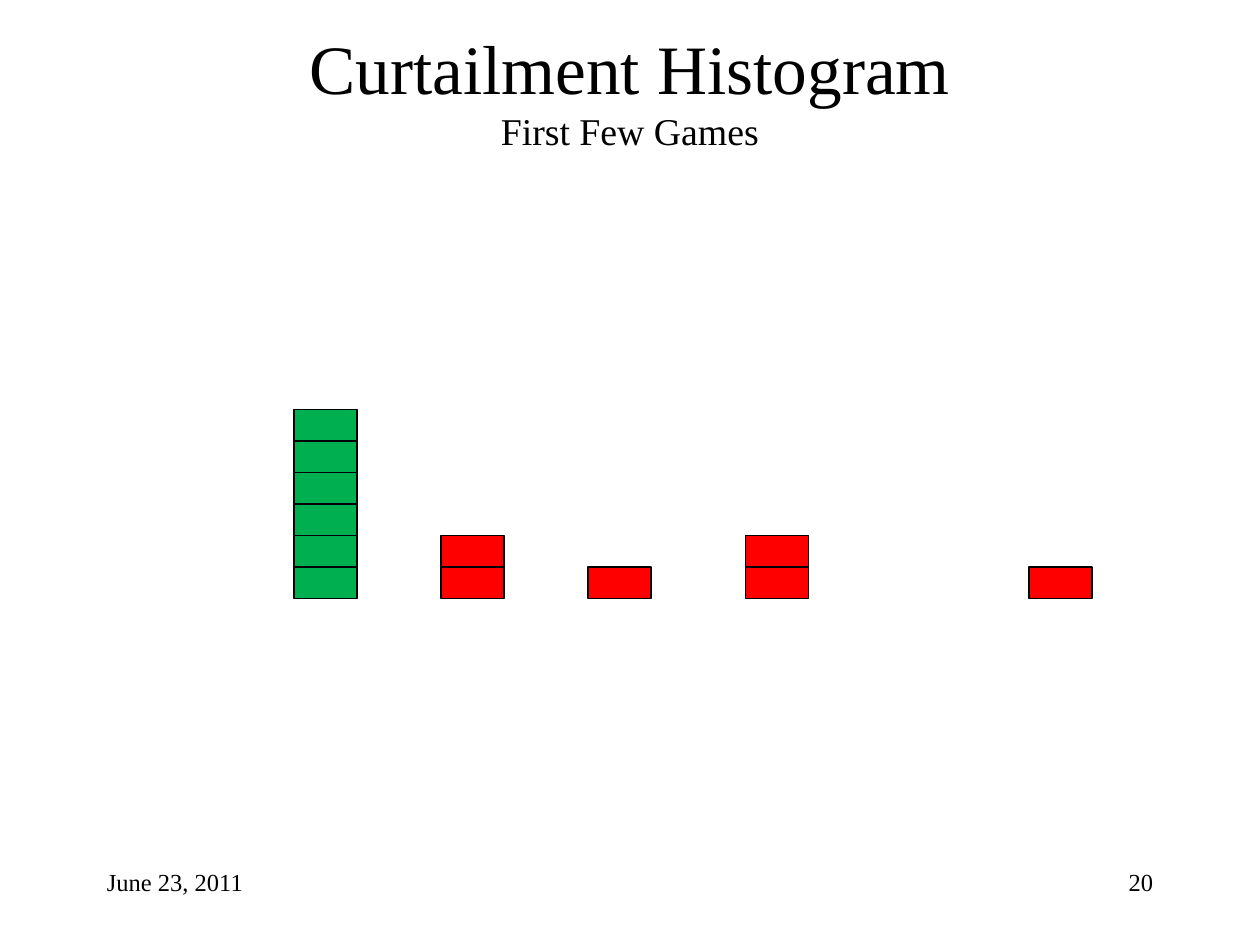
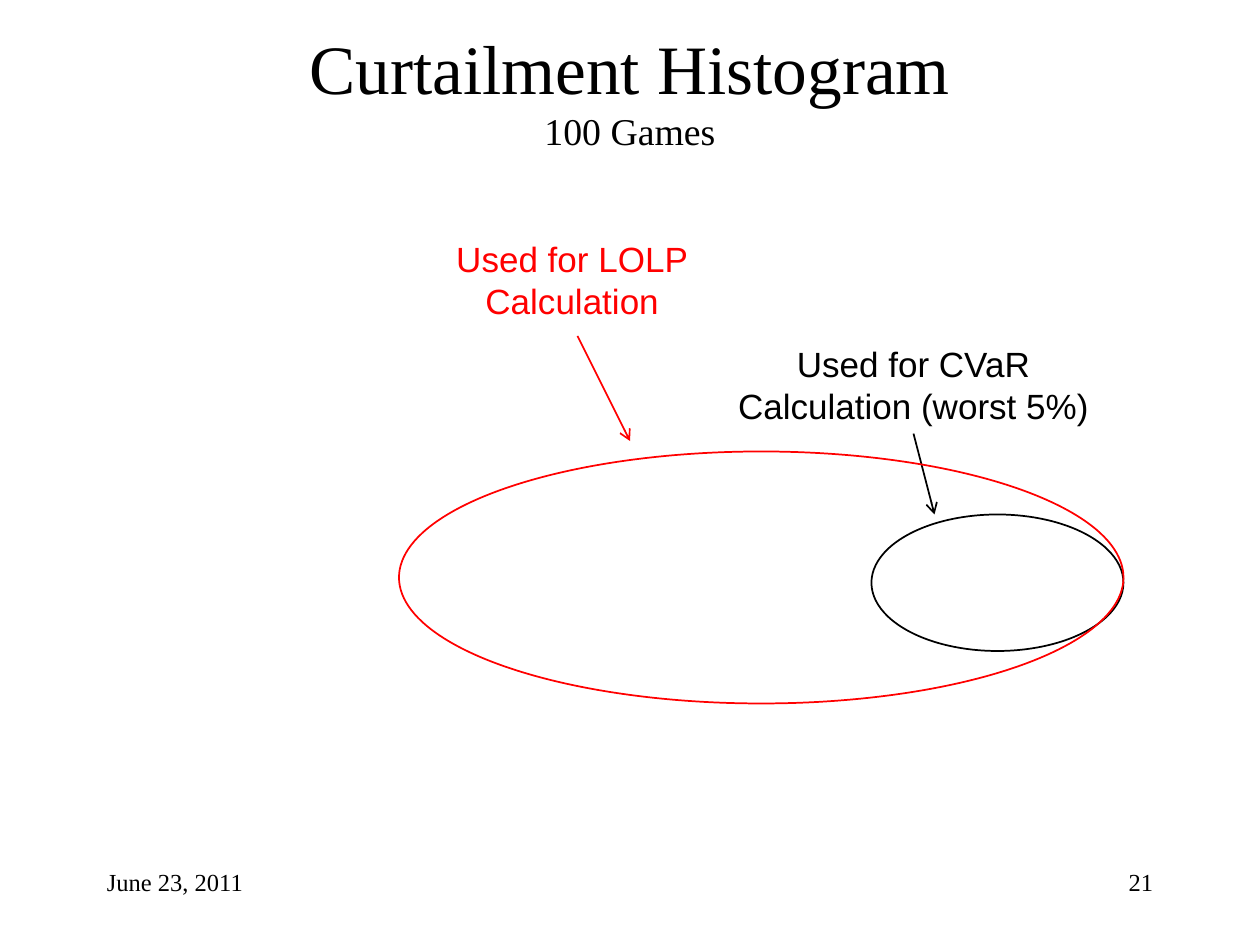
"""Build two curtailment histogram slides."""
from lxml.etree import SubElement
from pptx import Presentation
from pptx.dml.color import RGBColor
from pptx.enum.shapes import MSO_CONNECTOR, MSO_SHAPE
from pptx.enum.text import MSO_ANCHOR, PP_ALIGN
from pptx.oxml.ns import qn
from pptx.util import Emu, Pt

PX = 7620
BLACK, RED, GREEN = "000000", "FF0000", "00B050"

TITLE = "Curtailment Histogram"
DATE = "June 23, 2011"
FIRST_PAGE = 20
SUBTITLES = ["First Few Games", "100 Games"]

BLOCK_WIDTH, BLOCK_HEIGHT, BASELINE = 60, 30, 570
COLUMNS = [
    (280, 6, GREEN),
    (420, 2, RED),
    (560, 1, RED),
    (710, 2, RED),
    (980, 1, RED),
]

REGIONS = [
    {
        "color": BLACK,
        "lines": ["Used for CVaR Calculation (worst 5%)"],
        "label": (680, 320, 380, 92),
        "arrow": (870, 413, 890, 490),
        "oval": (830, 490, 240, 130),
    },
    {
        "color": RED,
        "lines": ["Used for LOLP", "Calculation"],
        "label": (370, 220, 350, 92),
        "arrow": (550, 320, 600, 420),
        "oval": (380, 430, 690, 240),
    },
]

TITLE_BOX = (90, 20, 1020, 130)
DATE_BOX = (90, 820, 250, 60)
NUMBER_BOX = (860, 820, 250, 60)

HEADING = {"name": "Times New Roman", "size": Pt(39.6)}
SUBHEADING = {"name": "Times New Roman", "size": Pt(21.6)}
FOOTER = {"name": "Times New Roman", "size": Pt(14)}
LABEL = {"name": "Arial", "size": Pt(20)}


def emu(lengths):
    return [Emu(length * PX) for length in lengths]


def rgb(color):
    return RGBColor.from_string(color)


def add_span(para, text, style, color=BLACK):
    span = para.add_run()
    span.text = text
    for name, value in style.items():
        setattr(span.font, name, value)
    span.font.color.rgb = rgb(color)


def add_box(page, place, lines, style, align, color=BLACK):
    frame = page.shapes.add_textbox(*emu(place)).text_frame
    frame.word_wrap = True
    for index, line in enumerate(lines):
        para = frame.add_paragraph() if index else frame.paragraphs[0]
        para.alignment = align
        add_span(para, line, style, color)
    return frame


def set_line(shape, color):
    shape.line.color.rgb = rgb(color)
    shape.line.width = Pt(1)


def add_outline(page, kind, place, line, fill=None):
    shape = page.shapes.add_shape(kind, *emu(place))
    shape.shadow.inherit = False
    if fill:
        shape.fill.solid()
        shape.fill.fore_color.rgb = rgb(fill)
    else:
        shape.fill.background()
    set_line(shape, line)


def add_arrow(page, ends, color):
    arrow = page.shapes.add_connector(MSO_CONNECTOR.STRAIGHT, *emu(ends))
    set_line(arrow, color)
    SubElement(arrow.line._get_or_add_ln(), qn("a:tailEnd"), type="arrow")
    SubElement(arrow._element.spPr, qn("a:effectLst"))


def add_page(deck, subtitle, number):
    page = deck.slides.add_slide(deck.slide_layouts[6])
    frame = add_box(page, TITLE_BOX, [TITLE], HEADING, PP_ALIGN.CENTER)
    frame.vertical_anchor = MSO_ANCHOR.MIDDLE
    para = frame.paragraphs[0]
    para.add_line_break()
    add_span(para, subtitle, SUBHEADING)
    add_box(page, DATE_BOX, [DATE], FOOTER, PP_ALIGN.LEFT)
    add_box(page, NUMBER_BOX, [str(number)], FOOTER, PP_ALIGN.RIGHT)
    return page


def add_histogram(page):
    for left, count, color in COLUMNS:
        for level in range(1, count + 1):
            place = (left, BASELINE - level * BLOCK_HEIGHT, BLOCK_WIDTH, BLOCK_HEIGHT)
            add_outline(page, MSO_SHAPE.RECTANGLE, place, BLACK, color)


def add_regions(page):
    for region in REGIONS:
        color = region["color"]
        add_outline(page, MSO_SHAPE.OVAL, region["oval"], color)
        add_box(page, region["label"], region["lines"], LABEL, PP_ALIGN.CENTER, color)
        add_arrow(page, region["arrow"], color)


def main():
    deck = Presentation()
    deck.slide_width, deck.slide_height = emu((1200, 900))
    pages = [
        add_page(deck, subtitle, number)
        for number, subtitle in enumerate(SUBTITLES, FIRST_PAGE)
    ]
    add_histogram(pages[0])
    add_regions(pages[1])
    deck.save("out.pptx")


if __name__ == "__main__":
    main()
